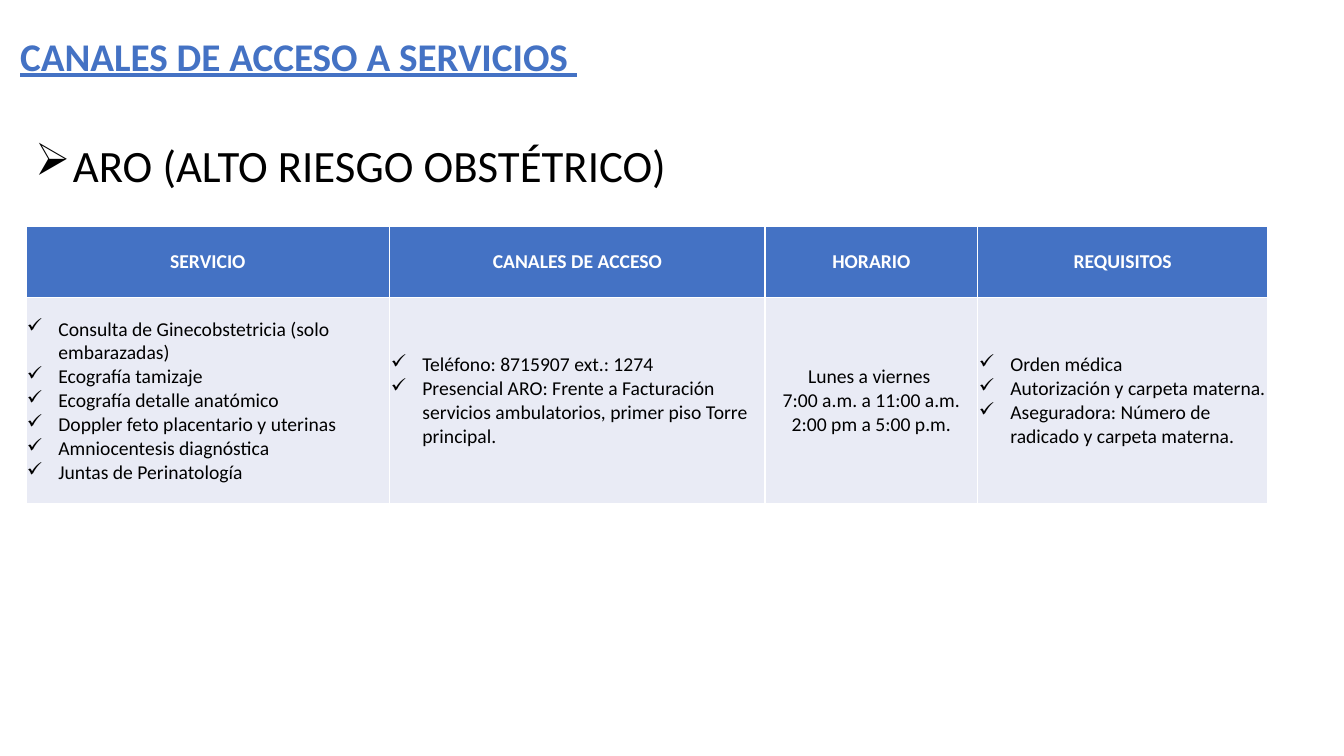
"""Build the slide on access channels for high-risk obstetric services."""
from lxml import etree
from pptx import Presentation
from pptx import util as u
from pptx.dml.color import RGBColor
from pptx.enum import text
from pptx.oxml import ns

BLUE = RGBColor(0x44, 0x72, 0xC4)
PALE = RGBColor(0xE9, 0xEB, 0xF5)
WHITE = RGBColor(0xFF, 0xFF, 0xFF)
BLACK = RGBColor(0x00, 0x00, 0x00)

COLUMNS = [
    ("SERVICIO", 260, "✓", [
        "Consulta de Ginecobstetricia (solo embarazadas)",
        "Ecografía tamizaje",
        "Ecografía detalle anatómico",
        "Doppler feto placentario y uterinas",
        "Amniocentesis diagnóstica",
        "Juntas de Perinatología",
    ]),
    ("CANALES DE ACCESO", 268, "✓", [
        "Teléfono: 8715907 ext.: 1274",
        "Presencial ARO: Frente a Facturación servicios ambulatorios, "
        "primer piso Torre principal.",
    ]),
    ("HORARIO", 152, None, [
        "Lunes a viernes ",
        "7:00 a.m. a 11:00 a.m.\v2:00 pm a 5:00 p.m.",
    ]),
    ("REQUISITOS", 207, "✓", [
        "Orden médica",
        "Autorización y carpeta materna.",
        "Aseguradora: Número de radicado y carpeta materna.",
    ]),
]


class SlideBuilder:
    """Hold the style and the current slide."""

    font_name = "Calibri"

    def __init__(self, slide):
        self.slide = slide

    def style(self, para, size, color, bold=False, underline=False):
        """Format every run of a paragraph."""
        for span in para.runs:
            span.font.name = self.font_name
            span.font.size = u.Pt(size)
            span.font.color.rgb = color
            span.font.bold = bold
            span.font.underline = underline

    def bullet(self, para, mark, indent):
        """Give a paragraph a character bullet with a hanging indent."""
        properties = para._p.get_or_add_pPr()
        properties.set("marL", str(u.Pt(indent)))
        properties.set("indent", str(-u.Pt(indent)))
        etree.SubElement(properties, ns.qn("a:buChar")).set("char", mark)

    def place(self, shape, left, top, width, height):
        """Move and size a shape."""
        shape.left, shape.top = u.Pt(left), u.Pt(top)
        shape.width, shape.height = u.Pt(width), u.Pt(height)

    def title(self, wording, *bounds):
        """Fill the title placeholder."""
        box = self.slide.shapes.title
        self.place(box, *bounds)
        frame = box.text_frame
        frame.text = wording
        frame.word_wrap = True
        frame.auto_size = text.MSO_AUTO_SIZE.NONE
        frame.vertical_anchor = text.MSO_ANCHOR.BOTTOM
        para = frame.paragraphs[0]
        para.alignment = text.PP_ALIGN.LEFT
        para.line_spacing = 0.9
        self.style(para, 28, BLUE, bold=True, underline=True)

    def heading(self, wording, *bounds):
        """Add a bulleted section heading."""
        box = self.slide.shapes.add_textbox(*map(u.Pt, bounds))
        frame = box.text_frame
        frame.text = wording
        frame.word_wrap = True
        para = frame.paragraphs[0]
        self.bullet(para, "➢", 27)
        self.style(para, 32, BLACK)

    def cell(self, cell, wording, fill, color, bold=False, mark=None):
        """Fill one table cell with centred or bulleted paragraphs."""
        cell.fill.solid()
        cell.fill.fore_color.rgb = fill
        cell.vertical_anchor = text.MSO_ANCHOR.MIDDLE
        cell.margin_left = cell.margin_right = cell.margin_top = u.Pt(0.7)
        cell.margin_bottom = 0
        cell.text_frame.text = wording
        for para in cell.text_frame.paragraphs:
            if mark:
                self.bullet(para, mark, 22.5)
            else:
                para.alignment = text.PP_ALIGN.CENTER
            self.style(para, 14, color, bold)

    def table(self, columns, row_heights, left, top):
        """Add a table with one header row and one row of lists."""
        width = sum(column[1] for column in columns)
        bounds = map(u.Pt, (left, top, width, sum(row_heights)))
        table = self.slide.shapes.add_table(2, len(columns), *bounds).table
        for row, height in zip(table.rows, row_heights):
            row.height = u.Pt(height)
        for index, (header, width, mark, items) in enumerate(columns):
            table.columns[index].width = u.Pt(width)
            self.cell(table.cell(0, index), header, BLUE, WHITE, bold=True)
            self.cell(table.cell(1, index), "\n".join(items), PALE, BLACK, mark=mark)


def main():
    deck = Presentation()
    deck.slide_width, deck.slide_height = u.Pt(960), u.Pt(540)
    page = SlideBuilder(deck.slides.add_slide(deck.slide_layouts[5]))
    page.title("CANALES DE ACCESO A SERVICIOS ", 7.2, 15, 659, 45.5)
    page.heading("ARO (ALTO RIESGO OBSTÉTRICO)", 18, 95, 478, 46)
    page.table(COLUMNS, (51, 147), 18.5, 161.5)
    deck.save("out.pptx")


if __name__ == "__main__":
    main()
